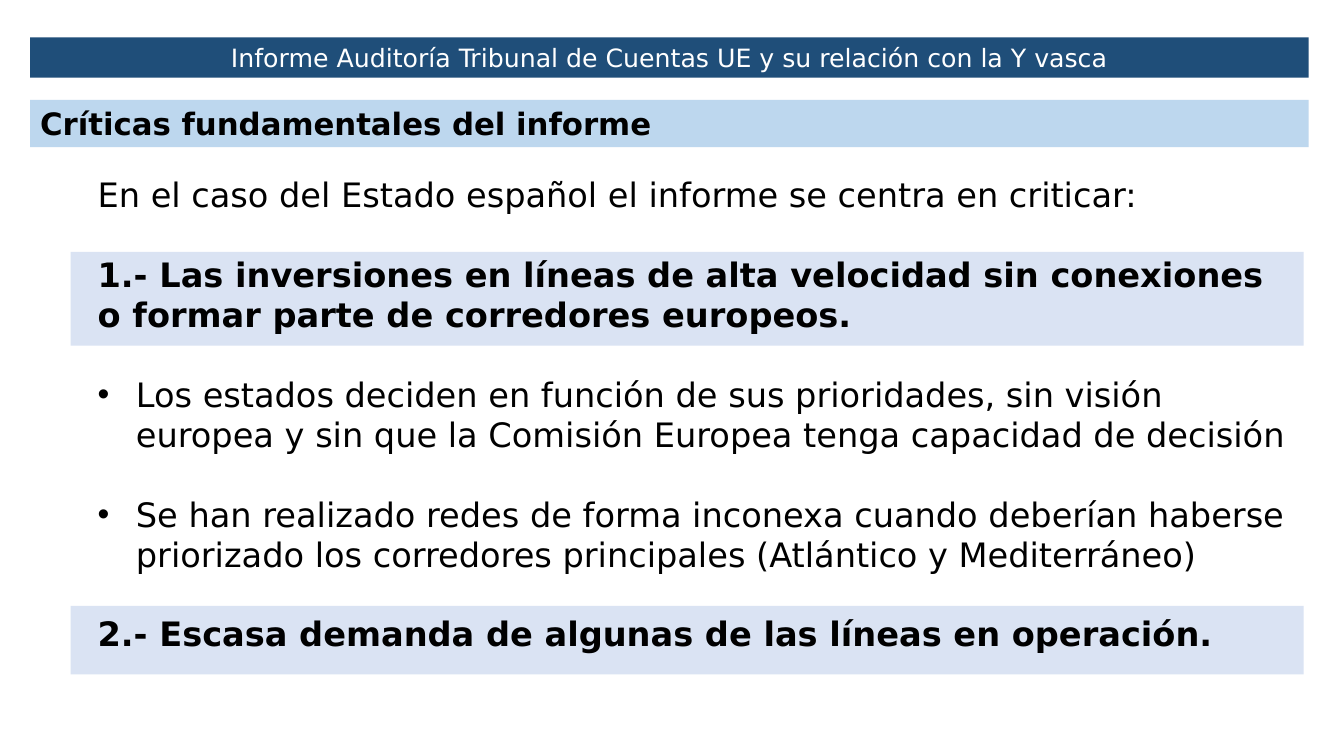
from lxml import etree
from pptx import Presentation
from pptx.dml.color import RGBColor
from pptx.enum.shapes import MSO_SHAPE
from pptx.enum.text import MSO_ANCHOR, MSO_AUTO_SIZE, PP_ALIGN
from pptx.oxml.ns import qn
from pptx.util import Inches, Pt

RECTANGLE = MSO_SHAPE.RECTANGLE
MIDDLE, TOP = MSO_ANCHOR.MIDDLE, MSO_ANCHOR.TOP
LEFT, CENTER = PP_ALIGN.LEFT, PP_ALIGN.CENTER
NO_AUTOFIT = MSO_AUTO_SIZE.NONE
TITLE_ONLY = 5

FONT = "DejaVu Sans"
COLORS = {
    "banner": "1F4E79",
    "section": "BDD7EE",
    "highlight": "DAE3F3",
    "light": "FFFFFF",
    "dark": "000000",
}
BULLET_INDENT = 0.38
PARAGRAPH_GAP = 28

# Text, bold, bulleted
BODY = [
    ("En el caso del Estado español el informe se centra en criticar:", False, False),
    ("1.- Las inversiones en líneas de alta velocidad sin conexiones "
     "o formar parte de corredores europeos.", True, False),
    ("Los estados deciden en función de sus prioridades, sin visión europea "
     "y sin que la Comisión Europea tenga capacidad de decisión", False, True),
    ("Se han realizado redes de forma inconexa cuando deberían haberse priorizado "
     "los corredores principales (Atlántico y Mediterráneo)", False, True),
    ("2.- Escasa demanda de algunas de las líneas en operación.", True, False),
]


def color(name):
    return RGBColor.from_string(COLORS[name])


def set_attributes(target, values):
    for name, value in values.items():
        setattr(target, name, value)


def fill_shape(shape, fill):
    shape.fill.solid()
    shape.fill.fore_color.rgb = color(fill)


def add_band(slide, box, fill):
    shape = slide.shapes.add_shape(RECTANGLE, *map(Inches, box))
    shape.shadow.inherit = False
    shape.line.fill.background()
    fill_shape(shape, fill)
    return shape


def format_frame(frame, anchor):
    set_attributes(frame, {
        "word_wrap": True,
        "auto_size": NO_AUTOFIT,
        "vertical_anchor": anchor,
        "margin_left": Inches(0.1),
        "margin_right": Inches(0.1),
        "margin_top": Inches(0.05),
        "margin_bottom": Inches(0.05),
    })


def write_paragraph(paragraph, text, size, font_color, bold=False, align=LEFT):
    paragraph.alignment = align
    run = paragraph.add_run()
    run.text = text
    set_attributes(run.font, {"name": FONT, "size": Pt(size), "bold": bold})
    run.font.color.rgb = color(font_color)


def add_bullet(paragraph):
    properties = paragraph._p.get_or_add_pPr()
    properties.set("marL", str(Inches(BULLET_INDENT)))
    properties.set("indent", str(-Inches(BULLET_INDENT)))
    etree.SubElement(properties, qn("a:buFont")).set("typeface", "Arial")
    etree.SubElement(properties, qn("a:buChar")).set("char", "•")


def set_title(slide, box, text):
    title = slide.shapes.title
    set_attributes(title, dict(zip(("left", "top", "width", "height"), map(Inches, box))))
    fill_shape(title, "banner")
    format_frame(title.text_frame, MIDDLE)
    write_paragraph(title.text_frame.paragraphs[0], text, 18, "light", align=CENTER)


def add_section_heading(slide, box, text):
    frame = add_band(slide, box, "section").text_frame
    format_frame(frame, MIDDLE)
    write_paragraph(frame.paragraphs[0], text, 22, "dark", bold=True)


def add_body(slide, box):
    frame = slide.shapes.add_textbox(*map(Inches, box)).text_frame
    format_frame(frame, TOP)
    for index, (text, bold, bulleted) in enumerate(BODY):
        paragraph = frame.add_paragraph() if index else frame.paragraphs[0]
        write_paragraph(paragraph, text, 24, "dark", bold)
        if index:
            paragraph.space_before = Pt(PARAGRAPH_GAP)
        if bulleted:
            add_bullet(paragraph)


def main():
    presentation = Presentation()
    presentation.slide_width = Inches(13.33)
    presentation.slide_height = Inches(7.5)
    slide = presentation.slides.add_slide(presentation.slide_layouts[TITLE_ONLY])

    # Highlights behind the two numbered criticisms
    for top, height in ((6.01, 0.68), (2.5, 0.93)):
        add_band(slide, (0.7, top, 12.23, height), "highlight")

    # Title banner and section heading
    set_title(slide, (0.3, 0.37, 12.68, 0.4),
              "Informe Auditoría Tribunal de Cuentas UE y su relación con la Y vasca")
    add_section_heading(slide, (0.3, 0.99, 12.68, 0.47),
                        "Críticas fundamentales del informe")

    # Criticisms
    add_body(slide, (0.87, 1.68, 12, 4.95))

    presentation.save("out.pptx")


if __name__ == "__main__":
    main()
